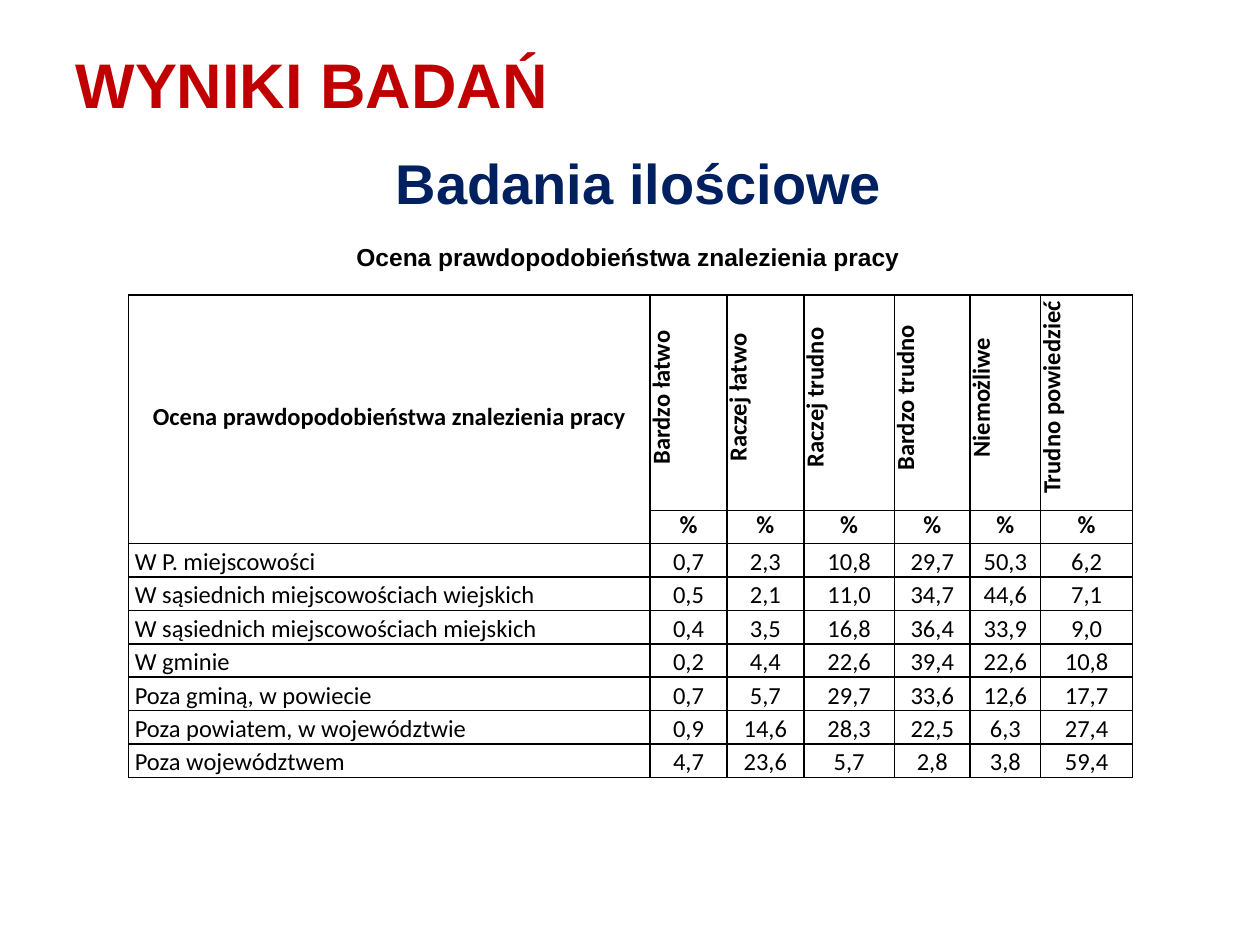
import pptx
import pptx.chart.data
import pptx.dml.color
import pptx.enum.text
import pptx.oxml
import pptx.oxml.ns
import pptx.util

Inches = pptx.util.Inches
Pt = pptx.util.Pt
ALIGN = pptx.enum.text.PP_ALIGN
ANCHOR = pptx.enum.text.MSO_ANCHOR

COLOURS = {"title": "C00000", "subtitle": "002060", "text": "000000", "border": "000000"}
SLIDE_WIDTH, SLIDE_HEIGHT = 10, 7.5
CAPTION = "Ocena prawdopodobieństwa znalezienia pracy"
ANSWERS = ["Bardzo łatwo", "Raczej łatwo", "Raczej trudno",
           "Bardzo trudno", "Niemożliwe", "Trudno powiedzieć"]
RESULTS = [
    ("W P. miejscowości", "0,7 2,3 10,8 29,7 50,3 6,2"),
    ("W sąsiednich miejscowościach wiejskich", "0,5 2,1 11,0 34,7 44,6 7,1"),
    ("W sąsiednich miejscowościach miejskich", "0,4 3,5 16,8 36,4 33,9 9,0"),
    ("W gminie", "0,2 4,4 22,6 39,4 22,6 10,8"),
    ("Poza gminą, w powiecie", "0,7 5,7 29,7 33,6 12,6 17,7"),
    ("Poza powiatem, w województwie", "0,9 14,6 28,3 22,5 6,3 27,4"),
    ("Poza województwem", "4,7 23,6 5,7 2,8 3,8 59,4"),
]
COLUMN_WIDTHS = [4.14, 0.61, 0.61, 0.72, 0.6, 0.56, 0.73]
HEADER_HEIGHT, TABLE_HEIGHT = 1.71, 3.83


def set_all(target, values):
    for name, value in values.items():
        setattr(target, name, value)


def format_font(font, colour, **values):
    set_all(font, values)
    font.color.rgb = pptx.dml.color.RGBColor.from_string(COLOURS[colour])


def place(shape, left, top, width, height):
    """Position a shape by shares of the slide's size."""
    set_all(shape, {
        "left": Inches(left * SLIDE_WIDTH), "top": Inches(top * SLIDE_HEIGHT),
        "width": Inches(width * SLIDE_WIDTH), "height": Inches(height * SLIDE_HEIGHT),
    })


def write_heading(shape, text, colour, size, alignment):
    frame = shape.text_frame
    set_all(frame, {"word_wrap": True, "vertical_anchor": ANCHOR.MIDDLE,
                    "auto_size": pptx.enum.text.MSO_AUTO_SIZE.NONE})
    paragraph = frame.paragraphs[0]
    paragraph.text = text
    paragraph.alignment = alignment
    format_font(paragraph.font, colour, name="Arial", size=Pt(size), bold=True)


def add_heading(slide, box, *text_format):
    shape = slide.shapes.add_textbox(0, 0, 0, 0)
    place(shape, *box)
    write_heading(shape, *text_format)


def draw_borders(cell):
    properties = cell._tc.get_or_add_tcPr()
    for side in ("lnL", "lnR", "lnT", "lnB"):
        properties.append(pptx.oxml.parse_xml(
            f'<a:{side} {pptx.oxml.ns.nsdecls("a")} w="{Pt(1)}"><a:solidFill>'
            f'<a:srgbClr val="{COLOURS["border"]}"/></a:solidFill></a:{side}>'))


def write_cell(cell, text, anchor, alignment=ALIGN.CENTER, bold=False):
    set_all(cell, {"margin_left": Inches(0.05), "margin_right": Inches(0.05),
                   "margin_top": 0, "margin_bottom": 0, "vertical_anchor": anchor})
    paragraph = cell.text_frame.paragraphs[0]
    paragraph.text = text
    set_all(paragraph, {"alignment": alignment, "line_spacing": Pt(15)})
    format_font(paragraph.runs[0].font, "text", name="Calibri", size=Pt(14), bold=bold)


def turn_text_upward(cell):
    cell._tc.get_or_add_tcPr().set("vert", "vert270")
    cell.text_frame.paragraphs[0]._p.get_or_add_pPr().set("marL", str(Inches(0.08)))


def add_results_table(slide):
    row_count = len(RESULTS) + 2
    table = slide.shapes.add_table(
        row_count, len(COLUMN_WIDTHS), Inches(1.02), Inches(2.34),
        Inches(sum(COLUMN_WIDTHS)), Inches(TABLE_HEIGHT)).table
    set_all(table, {"first_row": False, "horz_banding": False})
    for column, width in zip(table.columns, COLUMN_WIDTHS):
        column.width = Inches(width)
    for row in table.rows:
        row.height = Inches((TABLE_HEIGHT - HEADER_HEIGHT) / (row_count - 1))
    table.rows[0].height = Inches(HEADER_HEIGHT)
    for cell in table.iter_cells():
        draw_borders(cell)
        cell.fill.background()

    table.cell(0, 0).merge(table.cell(1, 0))
    write_cell(table.cell(0, 0), CAPTION, ANCHOR.MIDDLE, bold=True)
    for column, answer in enumerate(ANSWERS, 1):
        anchor = ANCHOR.MIDDLE if column <= 2 else ANCHOR.TOP
        write_cell(table.cell(0, column), answer, anchor, bold=True)
        turn_text_upward(table.cell(0, column))
        write_cell(table.cell(1, column), "%", ANCHOR.MIDDLE, bold=True)
    for row, (place_name, shares) in enumerate(RESULTS, 2):
        write_cell(table.cell(row, 0), place_name, ANCHOR.BOTTOM, ALIGN.LEFT)
        for column, share in enumerate(shares.split(), 1):
            write_cell(table.cell(row, column), share, ANCHOR.BOTTOM)


def main():
    presentation = pptx.Presentation()
    set_all(presentation, {"slide_width": Inches(SLIDE_WIDTH),
                           "slide_height": Inches(SLIDE_HEIGHT)})
    slide = presentation.slides.add_slide(presentation.slide_layouts[5])
    add_heading(slide, (0.273, 0.249, 0.555, 0.045), CAPTION, "text", 14, ALIGN.LEFT)
    add_results_table(slide)
    title = slide.shapes.title
    place(title, 0.05, 0.04, 0.9, 0.096)
    write_heading(title, "WYNIKI BADAŃ", "title", 36, ALIGN.LEFT)
    add_heading(slide, (0.086, 0.156, 0.842, 0.073),
                "Badania ilościowe", "subtitle", 32, ALIGN.CENTER)
    presentation.save("out.pptx")


if __name__ == "__main__":
    main()
